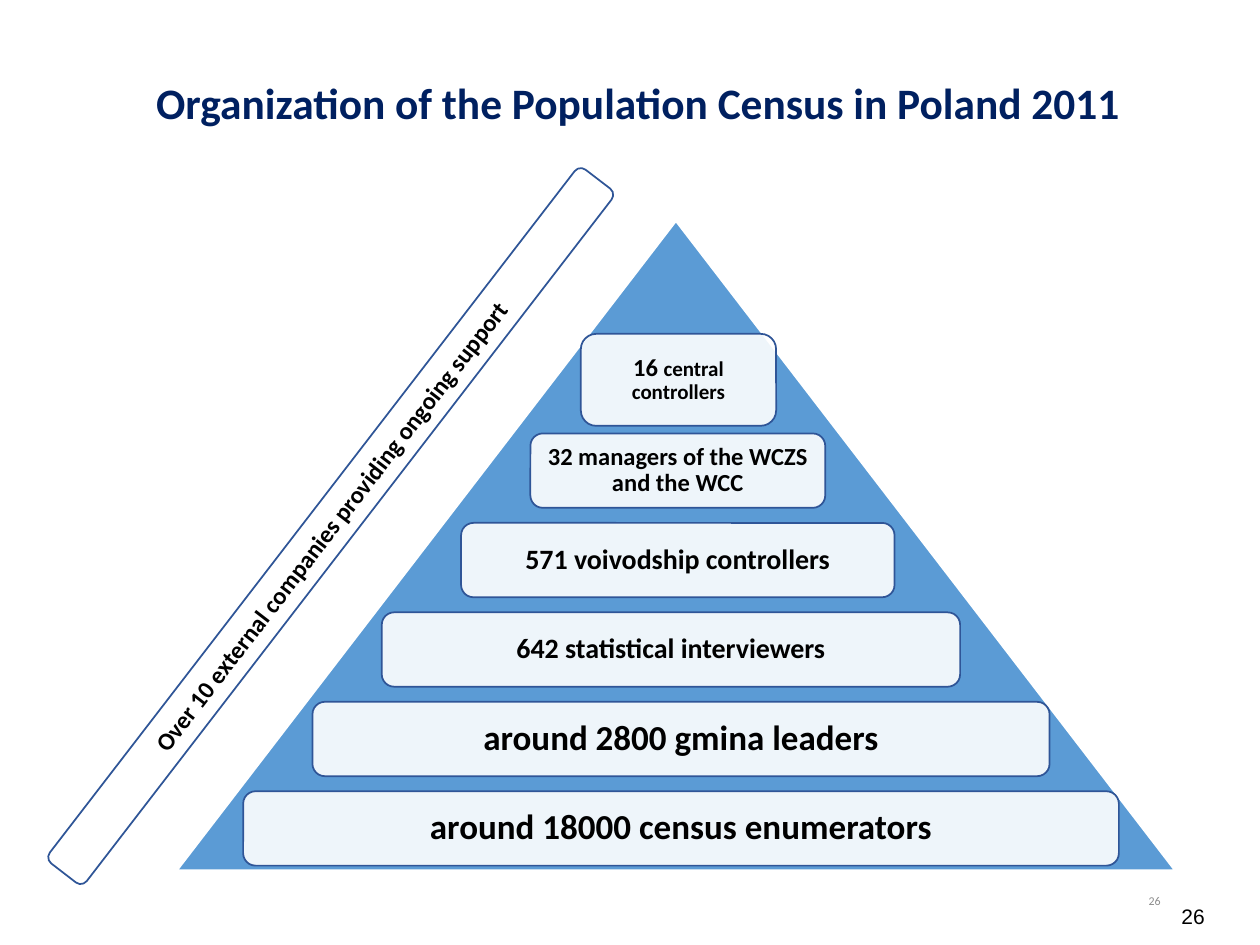
import dataclasses
import typing

import lxml.etree
import pptx
import pptx.dml.color
import pptx.enum.shapes
import pptx.enum.text
import pptx.oxml.ns
import pptx.util

Kind = pptx.enum.shapes.MSO_SHAPE
Align = pptx.enum.text.PP_ALIGN
Anchor = pptx.enum.text.MSO_ANCHOR


@dataclasses.dataclass(frozen=True)
class Theme:
    navy: str = "002060"
    blue: str = "5B9BD5"
    edge: str = "2F5597"
    white: str = "FFFFFF"
    black: str = "000000"
    grey: str = "8C8C8C"
    font: str = "Calibri"
    plain: str = "Arial"
    title: float = 24.8
    large: float = 20
    mid: float = 16
    small: float = 14
    tiny: float = 12
    note: float = 6.8


class Box(typing.NamedTuple):
    """Left, top, width and height in grid columns and rows."""
    left: float
    top: float
    wide: float
    high: float


class Run(typing.NamedTuple):
    text: str
    size: float
    color: str = Theme.black
    bold: bool = True
    font: str = Theme.font


class Tier(typing.NamedTuple):
    left: float
    wide: float
    inset: float
    runs: list[Run]


THEME = Theme()
COLS, ROWS = 100, 75
WIDTH, HEIGHT = pptx.util.Inches(10), pptx.util.Inches(7.5)

# Pyramid tiers from the top down; all but the first share one height and step
FIRST_TOP, FIRST_HIGH = 26.5, 7.3
NEXT_TOP, NEXT_HIGH, STEP = 34.4, 5.9, 7.1
TIERS = [
    Tier(46.1, 15.5, 0.06, [Run("16 ", THEME.small),
                            Run("central controllers", THEME.tiny)]),
    Tier(42.1, 23.4, 0.06,
         [Run("32 managers of the WCZS and the WCC", THEME.small)]),
    Tier(36.6, 34.4, 0.07, [Run("571 voivodship controllers", THEME.mid)]),
    Tier(30.3, 45.9, 0.07, [Run("642 statistical interviewers", THEME.mid)]),
    Tier(24.8, 58.5, 0.08, [Run("around 2800 gmina leaders", THEME.large)]),
    Tier(19.3, 69.5, 0.08,
         [Run("around 18000 census enumerators", THEME.large)]),
]


def place(box: Box) -> tuple[int, int, int, int]:
    return (int(box.left * WIDTH / COLS), int(box.top * HEIGHT / ROWS),
            int(box.wide * WIDTH / COLS), int(box.high * HEIGHT / ROWS))


def tint(code: str) -> pptx.dml.color.RGBColor:
    return pptx.dml.color.RGBColor.from_string(code)


def write(shape, runs: list[Run], align, anchor=Anchor.MIDDLE,
          lines: float = 1.0, inset: float | None = None) -> None:
    frame = shape.text_frame
    frame.word_wrap = True
    frame.vertical_anchor = anchor
    if inset is not None:
        gap = pptx.util.Inches(inset)
        frame.margin_left = frame.margin_right = gap
        frame.margin_top = frame.margin_bottom = gap
    para = frame.paragraphs[0]
    para.alignment = align
    para.line_spacing = lines
    for item in runs:
        run = para.add_run()
        run.text = item.text
        run.font.name = item.font
        run.font.size = pptx.util.Pt(item.size)
        run.font.bold = item.bold
        run.font.color.rgb = tint(item.color)


def label(slide, box: Box, run: Run, align, **style) -> None:
    write(slide.shapes.add_textbox(*place(box)), [run], align, **style)


def draw(slide, kind, box: Box, fill: str | None, line: str,
         weight: float = 1, alpha: int = 100):
    shape = slide.shapes.add_shape(kind, *place(box))
    shape.shadow.inherit = False
    shape.line.color.rgb = tint(line)
    shape.line.width = pptx.util.Pt(weight)
    if fill is None:
        shape.fill.background()
        return shape
    shape.fill.solid()
    shape.fill.fore_color.rgb = tint(fill)
    if alpha < 100:
        qn = pptx.oxml.ns.qn
        color = shape.fill._xPr.find(qn("a:solidFill")).find(qn("a:srgbClr"))
        lxml.etree.SubElement(color, qn("a:alpha"), val=str(alpha * 1000))
    return shape


def main() -> None:
    deck = pptx.Presentation()
    deck.slide_width, deck.slide_height = WIDTH, HEIGHT
    slide = deck.slides.add_slide(deck.slide_layouts[6])

    # Title and small page number
    label(slide, Box(11.4, 2.9, 78.9, 10.9),
          Run("Organization of the Population Census in Poland 2011",
              THEME.title, THEME.navy), Align.LEFT, lines=0.9)
    label(slide, Box(70.6, 69.5, 22.5, 4),
          Run("26", THEME.note, THEME.grey, False), Align.RIGHT)

    # Pyramid with its tiers
    draw(slide, Kind.ISOSCELES_TRIANGLE, Box(14, 17.5, 79.3, 51.6),
         THEME.blue, THEME.white, 1.5)
    for rank, tier in enumerate(TIERS):
        top, high = ((NEXT_TOP + (rank - 1) * STEP, NEXT_HIGH) if rank
                     else (FIRST_TOP, FIRST_HIGH))
        card = draw(slide, Kind.ROUNDED_RECTANGLE,
                    Box(tier.left, top, tier.wide, high),
                    THEME.white, THEME.edge, alpha=90)
        write(card, tier.runs, Align.CENTER, lines=0.9, inset=tier.inset)

    # Support bar along the left slope
    bar = draw(slide, Kind.FLOWCHART_ALTERNATE_PROCESS,
               Box(-8.5, 39.9, 69.5, 3.7), None, THEME.edge)
    bar.rotation = 307.6
    write(bar, [Run("Over 10 external companies providing ongoing support",
                    THEME.small)], Align.CENTER)

    # Large page number
    label(slide, Box(73.3, 71.2, 23.3, 4),
          Run("26", THEME.tiny, THEME.black, False, THEME.plain),
          Align.RIGHT, anchor=Anchor.TOP)

    deck.save("out.pptx")


if __name__ == "__main__":
    main()
